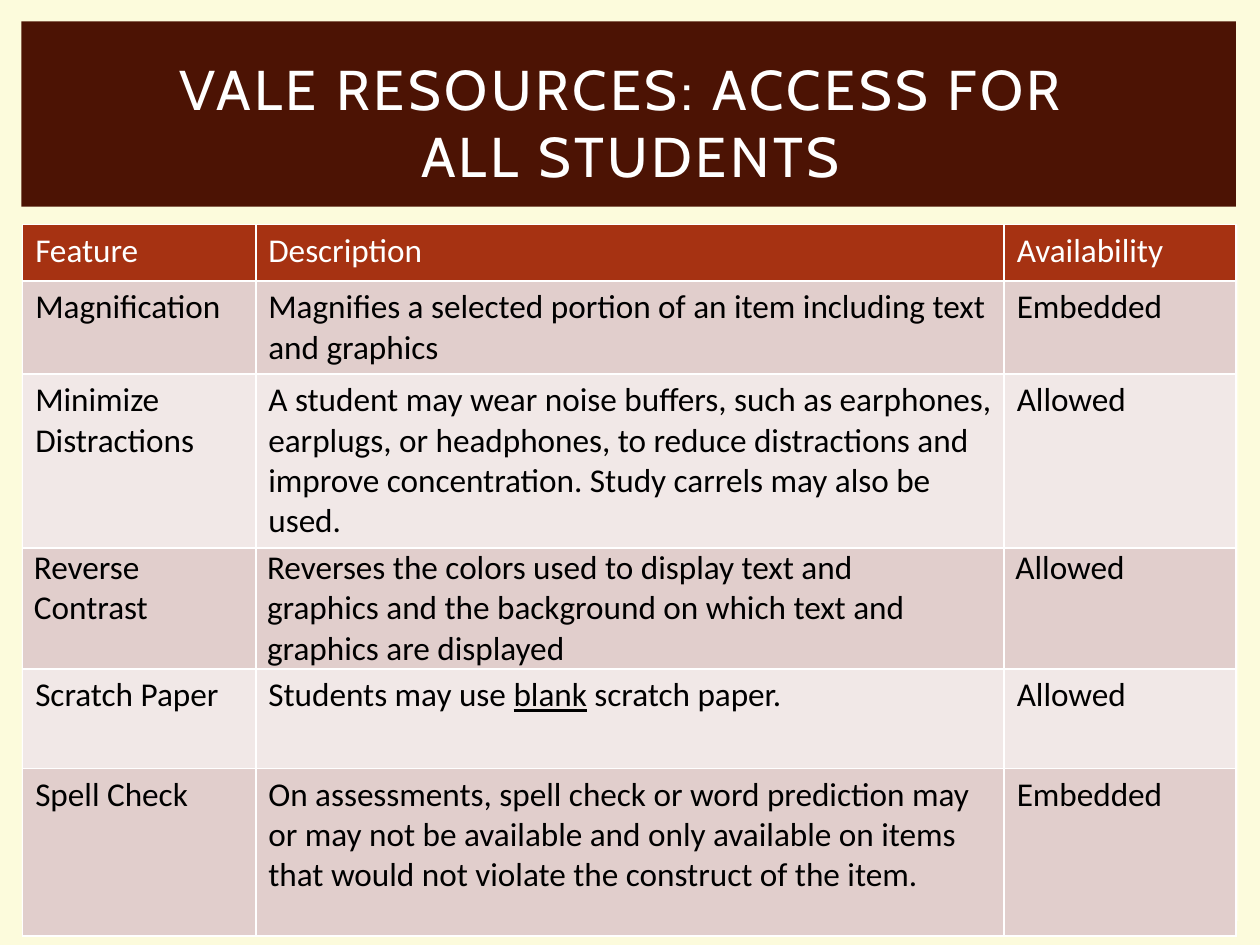
from pptx import Presentation
from pptx.dml.color import RGBColor
from pptx.enum.shapes import MSO_SHAPE as SHAPE
from pptx.enum.text import MSO_ANCHOR as ANCHOR, PP_ALIGN as ALIGN
from pptx.util import Inches, Pt

COLS = [1.85, 5.94, 1.84]
ROWS = [0.45, 0.74, 1.38, 0.96, 0.79, 1.33]
BANDS = ["F1E8E7", "E1CECC"]
TIGHT_ROW = 3
CELLS = [
    ["Feature", "Description", "Availability"],
    ["Magnification",
     "Magnifies a selected portion of an item including text and graphics",
     "Embedded"],
    ["Minimize Distractions",
     "A student may wear noise buffers, such as earphones, earplugs, or "
     "headphones, to reduce distractions and improve concentration. "
     "Study carrels may also be used.",
     "Allowed"],
    ["Reverse Contrast",
     "Reverses the colors used to display text and graphics and the "
     "background on which text and graphics are displayed",
     "Allowed"],
    ["Scratch Paper", ["Students may use ", "blank", " scratch paper."], "Allowed"],
    ["Spell Check",
     "On assessments, spell check or word prediction may or may not be "
     "available and only available on items that would not violate the "
     "construct of the item.",
     "Embedded"],
]


def paint(fill, color):
    fill.solid()
    fill.fore_color.rgb = RGBColor.from_string(color)


def style(r, font, size, color):
    r.font.name, r.font.size, r.font.bold = font, Pt(size), False
    r.font.color.rgb = RGBColor.from_string(color)


prs = Presentation()
prs.slide_width, prs.slide_height = Inches(10), Inches(7.5)
s = prs.slides.add_slide(prs.slide_layouts[6])
paint(s.background.fill, "FCFBDC")

# Content panel and title band
for box, color in [((0.17, 1.79, 9.66, 5.52), "FFFEE6"),
                   ((0.17, 0.17, 9.64, 1.47), "4C1304")]:
    sp = s.shapes.add_shape(SHAPE.RECTANGLE, *map(Inches, box))
    sp.shadow.inherit = False
    paint(sp.fill, color)
    sp.line.fill.background()

# Title
tf = s.shapes.add_textbox(*map(Inches, (0.42, 0.39, 9.17, 1.15))).text_frame
tf.word_wrap = True
tf.vertical_anchor = ANCHOR.MIDDLE
p = tf.paragraphs[0]
p.text = "VALE RESOURCES: ACCESS FOR \vALL STUDENTS"
p.alignment = ALIGN.CENTER
for r in p.runs:
    style(r, "Cabin", 32, "FFFFFF")
    r.font._element.set("spc", "200")

# Resource table
table = s.shapes.add_table(len(ROWS), len(COLS), Inches(0.18), Inches(1.78),
                           Inches(sum(COLS)), Inches(sum(ROWS))).table
for column, width in zip(table.columns, COLS):
    column.width = Inches(width)
for i, (row, height) in enumerate(zip(table.rows, ROWS)):
    row.height = Inches(height)
    for j, content in enumerate(CELLS[i]):
        cell = table.cell(i, j)
        paint(cell.fill, BANDS[i % 2] if i else "A63212")
        if i == TIGHT_ROW:
            cell.margin_left, cell.margin_right = Inches(0.09), Inches(0.35)
            cell.margin_top = cell.margin_bottom = 0
        p = cell.text_frame.paragraphs[0]
        for text in [content] if isinstance(content, str) else content:
            r = p.add_run()
            r.text = text
            style(r, "Calibri", 19, "000000" if i else "FFFFFF")
            if text == "blank":
                r.font.underline = True

prs.save("out.pptx")
